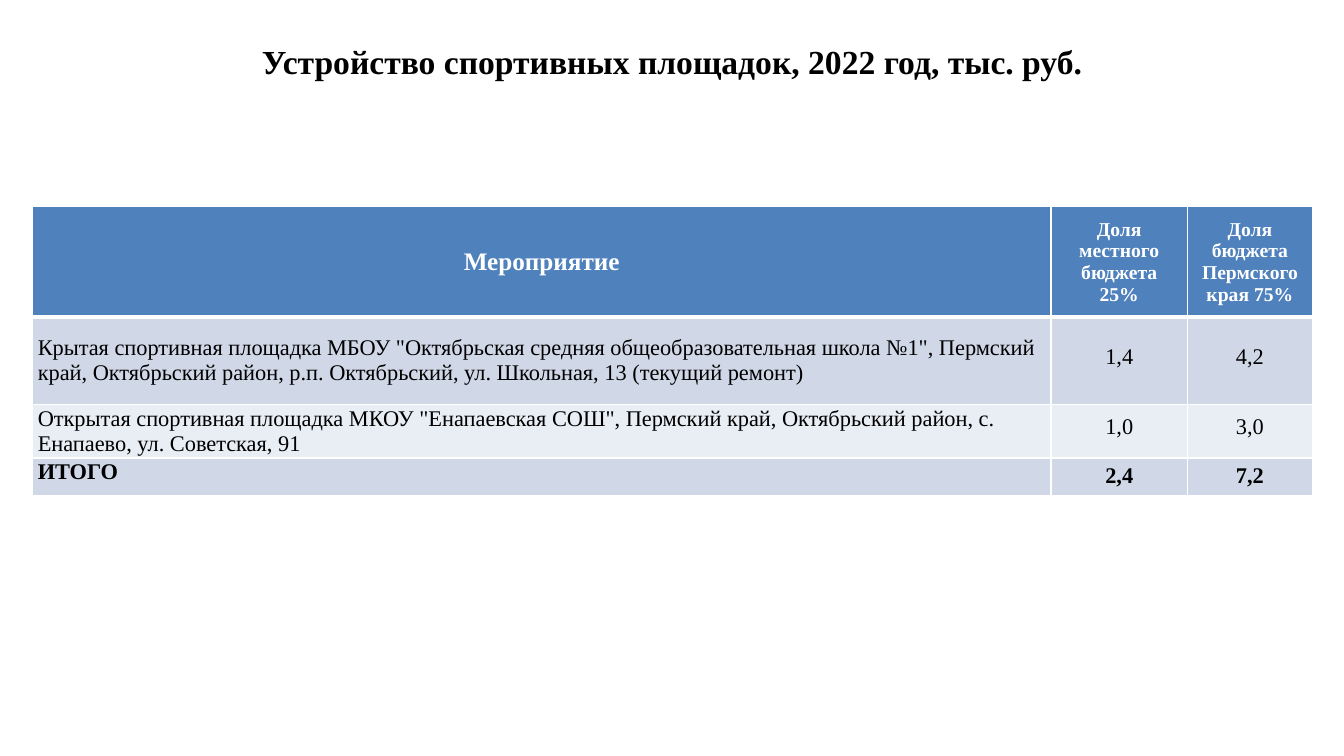
import pptx
import pptx.dml.color
import pptx.enum.text
import pptx.oxml.ns
import pptx.util
import lxml.etree

PX = 9525
FONT = "Times New Roman"
BLACK, WHITE = "000000", "FFFFFF"
HEADER_FILL, ODD_FILL, EVEN_FILL = "4F81BD", "D0D8E8", "E9EDF4"
LEFT = pptx.enum.text.PP_ALIGN.LEFT
CENTER = pptx.enum.text.PP_ALIGN.CENTER
TOP = pptx.enum.text.MSO_ANCHOR.TOP
MIDDLE = pptx.enum.text.MSO_ANCHOR.MIDDLE

COLUMN_WIDTHS = [970, 130, 119]
ROW_HEIGHTS = [105, 83, 48, 36]
HEADINGS = ["Мероприятие", "Доля местного бюджета 25%", "Доля бюджета Пермского края 75%"]
ACTIVITIES = [
    ('Крытая спортивная площадка МБОУ "Октябрьская средняя общеобразовательная школа №1", '
     "Пермский край, Октябрьский район, р.п. Октябрьский, ул. Школьная, 13 (текущий ремонт)",
     "1,4", "4,2"),
    ('Открытая спортивная площадка МКОУ "Енапаевская СОШ", Пермский край, '
     "Октябрьский район, с. Енапаево, ул. Советская, 91", "1,0", "3,0"),
]
TOTALS = ["ИТОГО", "2,4", "7,2"]


def px(length):
    return pptx.util.Emu(length * PX)


def color(value):
    return pptx.dml.color.RGBColor.from_string(value)


def write(frame, text, size, tint=BLACK, bold=False, align=CENTER, spacing=None):
    paragraph = frame.paragraphs[0]
    paragraph.alignment = align
    if spacing:
        paragraph.line_spacing = pptx.util.Pt(spacing)
    run = paragraph.add_run()
    run.text = text
    run.font.name = FONT
    run.font.size = pptx.util.Pt(size)
    run.font.bold = bold
    run.font.color.rgb = color(tint)


def add_title(slide, text):
    shape = slide.shapes.add_textbox(px(64), px(29), px(1152), px(58))
    shape.text_frame.word_wrap = True
    shape.text_frame.vertical_anchor = MIDDLE
    write(shape.text_frame, text, 24, bold=True)


def add_borders(cell, bottom_width):
    qn = pptx.oxml.ns.qn
    properties = cell._tc.get_or_add_tcPr()
    for side, width in (("L", 1), ("R", 1), ("T", 1), ("B", bottom_width)):
        line = lxml.etree.SubElement(properties, qn(f"a:ln{side}"), w=str(pptx.util.Pt(width)))
        fill = lxml.etree.SubElement(line, qn("a:solidFill"))
        lxml.etree.SubElement(fill, qn("a:srgbClr"), val=WHITE)


def fill_cell(cell, text, size, fill, anchor=MIDDLE, tight=True, bottom_width=1, **style):
    add_borders(cell, bottom_width)
    cell.fill.solid()
    cell.fill.fore_color.rgb = color(fill)
    cell.vertical_anchor = anchor
    if tight:
        cell.margin_left = cell.margin_right = px(5)
        cell.margin_top = cell.margin_bottom = 0
    write(cell.text_frame, text, size, **style)


def add_budget_table(slide):
    frame = slide.shapes.add_table(len(ROW_HEIGHTS), len(COLUMN_WIDTHS), px(31), px(197),
                                   px(sum(COLUMN_WIDTHS)), px(sum(ROW_HEIGHTS)))
    table = frame.table
    for column, width in zip(table.columns, COLUMN_WIDTHS):
        column.width = px(width)
    for row, height in zip(table.rows, ROW_HEIGHTS):
        row.height = px(height)

    for index, heading in enumerate(HEADINGS):
        fill_cell(table.cell(0, index), heading, 14 if index else 18, HEADER_FILL,
                  tight=False, bottom_width=3, tint=WHITE, bold=True)

    for number, (activity, *shares) in enumerate(ACTIVITIES, 1):
        fill = ODD_FILL if number % 2 else EVEN_FILL
        fill_cell(table.cell(number, 0), activity, 16, fill, align=LEFT)
        for index, share in enumerate(shares, 1):
            fill_cell(table.cell(number, index), share, 16, fill, spacing=12)

    last = len(ROW_HEIGHTS) - 1
    label, *sums = TOTALS
    fill_cell(table.cell(last, 0), label, 16, ODD_FILL, bold=True, align=LEFT, spacing=11)
    for index, total in enumerate(sums, 1):
        fill_cell(table.cell(last, index), total, 16, ODD_FILL, anchor=TOP, tight=False, bold=True)


def main():
    presentation = pptx.Presentation()
    presentation.slide_width = px(1280)
    presentation.slide_height = px(720)
    slide = presentation.slides.add_slide(presentation.slide_layouts[6])
    add_title(slide, "Устройство спортивных площадок, 2022 год, тыс. руб.")
    add_budget_table(slide)
    presentation.save("out.pptx")


if __name__ == "__main__":
    main()
